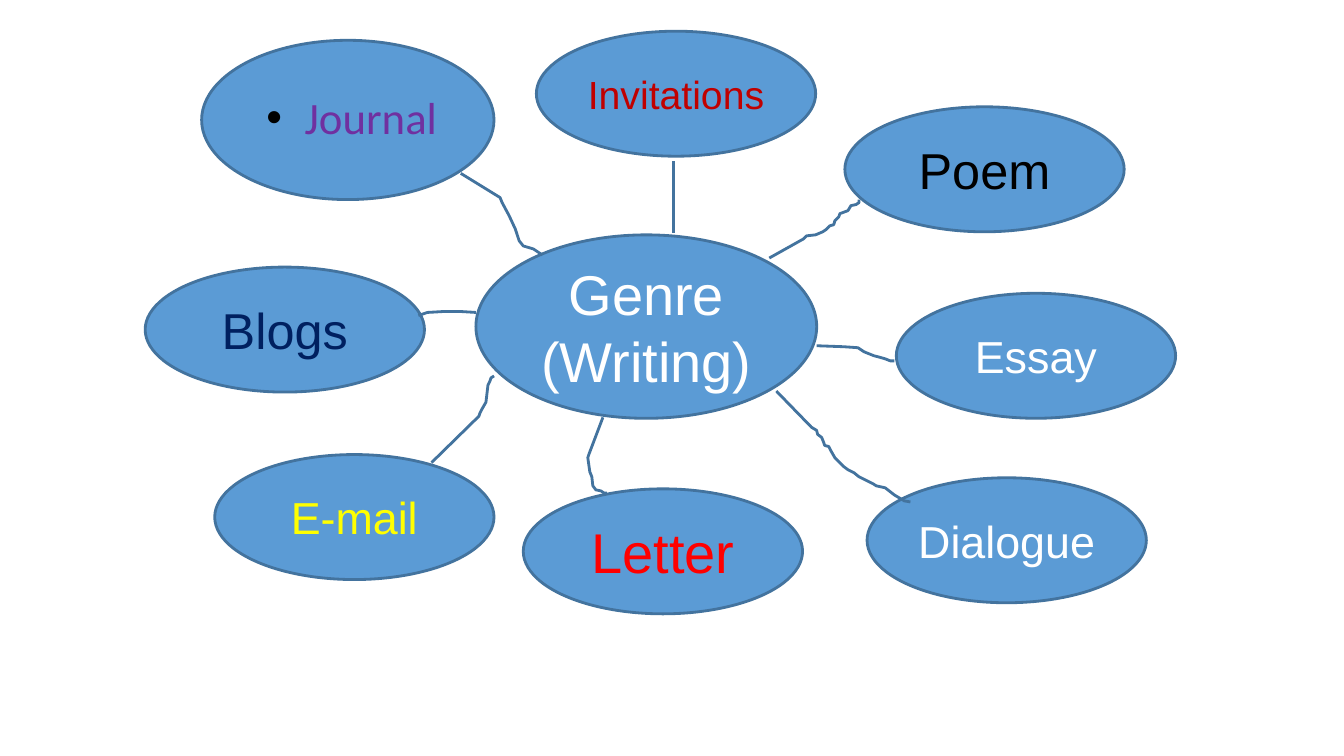
from dataclasses import dataclass

from lxml.etree import SubElement
from pptx import Presentation
from pptx.dml.color import RGBColor
from pptx.enum.shapes import MSO_CONNECTOR, MSO_SHAPE
from pptx.enum.text import MSO_ANCHOR, PP_ALIGN
from pptx.oxml.ns import qn
from pptx.shapes.autoshape import Shape
from pptx.slide import Slide
from pptx.text.text import _Paragraph as Paragraph
from pptx.util import Emu, Pt

EMU_PER_PX = 9144  # 100 px to the inch
COLORS = {
    "bubble": "5B9BD5", "outline": "43739E", "white": "FFFFFF",
    "black": "000000", "purple": "7030A0", "navy": "002060",
    "yellow": "FFFF00", "red": "FF0000", "crimson": "C00000",
}
GENRE_SIZE = (277, 124)
LINE_WIDTH = Pt(2)


@dataclass(frozen=True)
class Bubble:
    lines: tuple[str, ...]
    left: int
    top: int
    points: int
    color: str
    size: tuple[int, int] = GENRE_SIZE
    font: str = "Arial"
    bulleted: bool = False


BUBBLES = (
    Bubble(("Genre", "(Writing)"), 472, 233, 40, "white", (338, 182)),
    Bubble(("Poem",), 838, 106, 36, "black"),
    Bubble(("Journal",), 200, 40, 32, "purple", (290, 158), "Calibri", True),
    Bubble(("Dialogue",), 860, 474, 32, "white"),
    Bubble(("Essay",), 889, 291, 32, "white"),
    Bubble(("Blogs",), 144, 265, 36, "navy"),
    Bubble(("E-mail",), 213, 451, 32, "yellow"),
    Bubble(("Letter",), 519, 485, 40, "red"),
    Bubble(("Invitations",), 532, 31, 28, "crimson"),
)

INVITATIONS_LINK = ((668, 160), (668, 231))
HAND_DRAWN_LINKS = {
    "Journal": (
        (457, 172), (496, 196), (498, 201), (505, 214), (511, 227),
        (515, 239), (519, 244), (529, 247), (538, 253),
    ),
    "Poem": (
        (763, 256), (797, 237), (800, 234), (809, 233), (816, 230),
        (819, 228), (823, 224), (827, 223), (828, 219), (832, 215),
        (833, 212), (841, 209), (844, 204), (849, 203), (852, 201),
        (852, 198),
    ),
    "Essay": (
        (810, 343), (837, 344), (851, 345), (857, 349), (867, 353),
        (871, 354), (878, 356), (883, 358), (887, 358),
    ),
    "Dialogue": (
        (770, 388), (805, 424), (810, 427), (811, 431), (815, 434),
        (817, 439), (818, 442), (822, 443), (824, 447), (828, 454),
        (833, 459), (837, 463), (841, 466), (847, 469), (852, 473),
        (858, 476), (866, 480), (869, 482), (878, 484), (887, 491),
        (897, 497), (903, 498),
    ),
    "Letter": (
        (598, 414), (584, 451), (583, 454), (585, 468), (587, 473),
        (588, 482), (591, 486), (596, 487), (599, 489), (602, 489),
    ),
    "E-mail": (
        (428, 459), (475, 413), (476, 410), (478, 406), (482, 399),
        (484, 382), (486, 378), (487, 375), (490, 373),
    ),
    "Blogs": ((415, 313), (424, 310), (441, 309), (456, 309), (472, 310)),
}


def px(length: int) -> Emu:
    return Emu(length * EMU_PER_PX)


def rgb(name: str) -> RGBColor:
    return RGBColor.from_string(COLORS[name])


def style_outline(shape: Shape) -> None:
    shape.shadow.inherit = False
    shape.line.color.rgb = rgb("outline")
    shape.line.width = LINE_WIDTH


def add_bullet(paragraph: Paragraph) -> None:
    """Give the paragraph a black round bullet and a hanging indent."""
    properties = paragraph._p.get_or_add_pPr()
    properties.set("marL", str(px(50)))
    properties.set("indent", str(px(-38)))
    bullet_color = SubElement(properties, qn("a:buClr"))
    SubElement(bullet_color, qn("a:srgbClr"), val=COLORS["black"])
    SubElement(properties, qn("a:buFont"), typeface="Arial")
    SubElement(properties, qn("a:buChar"), char="•")


def add_bubble(slide: Slide, bubble: Bubble) -> None:
    width, height = bubble.size
    oval = slide.shapes.add_shape(
        MSO_SHAPE.OVAL, px(bubble.left), px(bubble.top), px(width), px(height)
    )
    style_outline(oval)
    oval.fill.solid()
    oval.fill.fore_color.rgb = rgb("bubble")
    frame = oval.text_frame
    frame.word_wrap = True
    frame.vertical_anchor = MSO_ANCHOR.MIDDLE
    for index, line in enumerate(bubble.lines):
        paragraph = frame.add_paragraph() if index else frame.paragraphs[0]
        if bubble.bulleted:
            add_bullet(paragraph)
            paragraph.alignment = PP_ALIGN.LEFT
            paragraph.line_spacing = 0.9
        else:
            paragraph.alignment = PP_ALIGN.CENTER
        run = paragraph.add_run()
        run.text = line
        run.font.name = bubble.font
        run.font.size = Pt(bubble.points)
        run.font.color.rgb = rgb(bubble.color)


def add_hand_drawn_link(slide: Slide, points: tuple[tuple[int, int], ...]) -> None:
    start, *rest = points
    builder = slide.shapes.build_freeform(*start, scale=EMU_PER_PX)
    builder.add_line_segments(rest, close=False)
    link = builder.convert_to_shape()
    link.fill.background()
    style_outline(link)


def add_straight_link(
    slide: Slide, start: tuple[int, int], end: tuple[int, int]
) -> None:
    link = slide.shapes.add_connector(
        MSO_CONNECTOR.STRAIGHT, *map(px, start), *map(px, end)
    )
    link.line.color.rgb = rgb("outline")
    link.line.width = LINE_WIDTH
    SubElement(link._element.spPr, qn("a:effectLst"))


def main() -> None:
    deck = Presentation()
    deck.slide_width, deck.slide_height = px(1333), px(750)
    slide = deck.slides.add_slide(deck.slide_layouts[6])
    for bubble in BUBBLES:
        add_bubble(slide, bubble)
    add_straight_link(slide, *INVITATIONS_LINK)
    for points in HAND_DRAWN_LINKS.values():
        add_hand_drawn_link(slide, points)
    deck.save("out.pptx")


if __name__ == "__main__":
    main()
